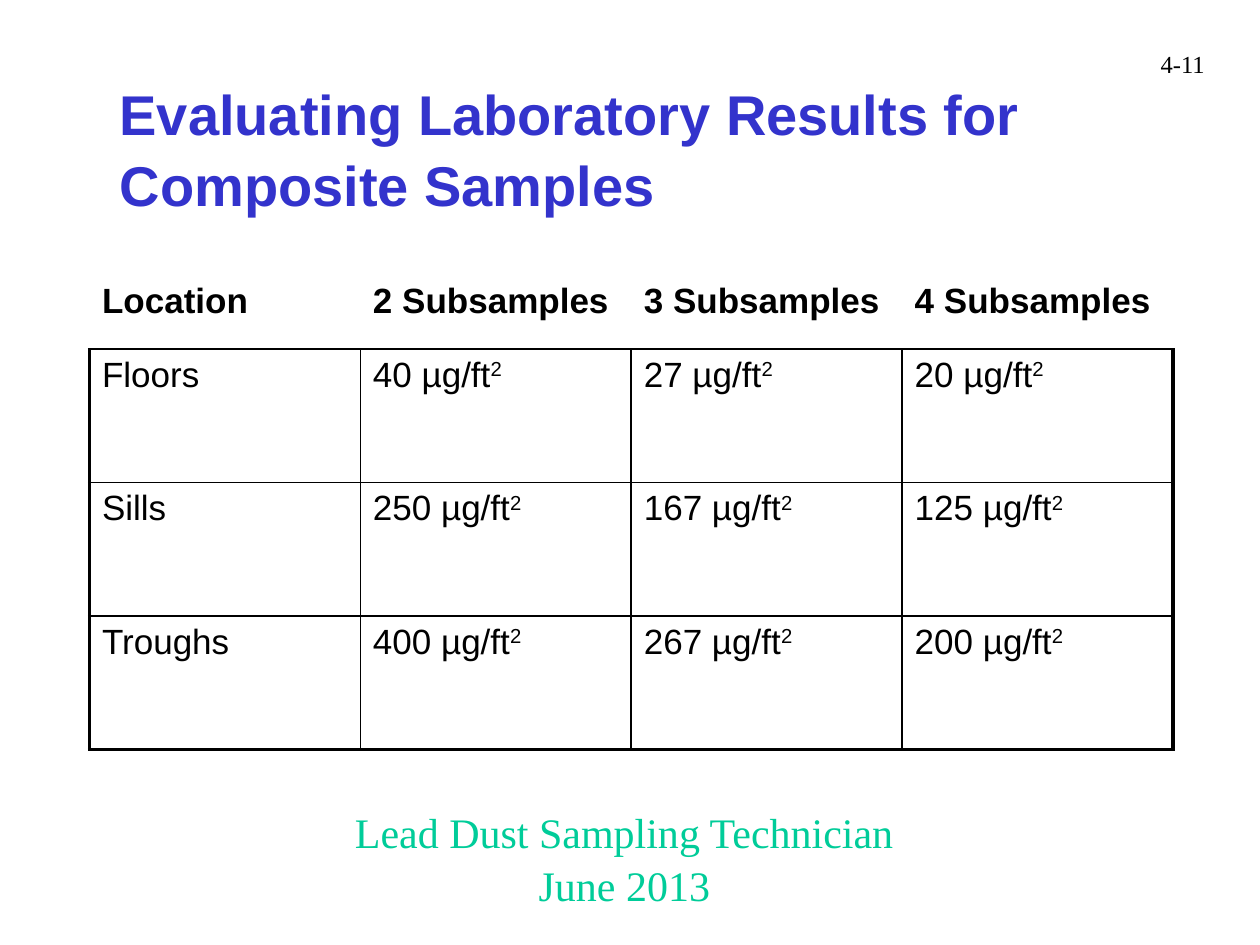
from lxml import etree
from pptx import Presentation
from pptx.dml.color import RGBColor
from pptx.enum.text import MSO_ANCHOR, PP_ALIGN
from pptx.oxml.ns import qn
from pptx.util import Inches, Pt

LEFT, CENTER, RIGHT = PP_ALIGN.LEFT, PP_ALIGN.CENTER, PP_ALIGN.RIGHT
MIDDLE = MSO_ANCHOR.MIDDLE
SANS, SERIF = "Arial", "Times New Roman"
BLACK, BLUE, GREEN = "000000", "3333CC", "00CC99"
NO_STYLE = "{2D5ABB26-0587-4C30-8999-92F81FD0307C}"
THIN, THICK = 1, 2.25

TITLE = "Evaluating Laboratory Results for Composite Samples"
FOOTER = "Lead Dust Sampling Technician\nJune 2013"
PAGE = "4-11"
HEADER = ["Location", "2 Subsamples", "3 Subsamples", "4 Subsamples"]
LIMITS = [
    ("Floors", 40, 27, 20),
    ("Sills", 250, 167, 125),
    ("Troughs", 400, 267, 200),
]
UNIT, POWER = " µg/ft", "2"
COL_W, HEAD_H, ROW_H = 2.15, 0.58, 1.06


def color(hex_string):
    return RGBColor.from_string(hex_string)


def style(r, size, name, hex_string, bold=False):
    f = r.font
    f.size, f.name, f.bold = Pt(size), name, bold
    f.color.rgb = color(hex_string)


def write(tf, text, align, size, name, hex_string, bold=False, spacing=1.05):
    tf.word_wrap = True
    tf.text = text
    for p in tf.paragraphs:
        p.alignment = align
        p.line_spacing = spacing
        for r in p.runs:
            style(r, size, name, hex_string, bold)


def add_text(s, box, *args):
    tb = s.shapes.add_textbox(*map(Inches, box))
    write(tb.text_frame, *args)


def set_border(cell, side, width):
    ln = etree.SubElement(cell._tc.get_or_add_tcPr(), qn(f"a:ln{side}"), w=str(Pt(width)))
    fill = etree.SubElement(ln, qn("a:solidFill"))
    etree.SubElement(fill, qn("a:srgbClr"), val=BLACK)


def add_limits_table(s):
    rows, cols = len(LIMITS) + 1, len(HEADER)
    size = (COL_W * cols, HEAD_H + ROW_H * len(LIMITS))
    table = s.shapes.add_table(rows, cols, *map(Inches, (0.71, 2.19, *size))).table
    table._tbl.tblPr.find(qn("a:tableStyleId")).text = NO_STYLE
    table.horz_banding = False
    for col in table.columns:
        col.width = Inches(COL_W)
    for i, values in enumerate([HEADER, *LIMITS]):
        table.rows[i].height = Inches(ROW_H if i else HEAD_H)
        for j, value in enumerate(values):
            cell = table.cell(i, j)
            p = cell.text_frame.paragraphs[0]
            is_limit = i > 0 and j > 0
            p.text = f"{value}{UNIT}" if is_limit else value
            if is_limit:
                r = p.add_run()
                r.text = POWER
                r.font._element.set("baseline", "30000")
            for r in p.runs:
                style(r, 20, SANS, BLACK, i == 0)
            if i:
                set_border(cell, "L", THIN if j else THICK)
                set_border(cell, "R", THICK if j == cols - 1 else THIN)
                set_border(cell, "T", THIN)
            set_border(cell, "B", THICK if i == rows - 1 else THIN)
            cell.fill.background()


def main():
    prs = Presentation()
    prs.slide_width, prs.slide_height = Inches(10), Inches(7.5)
    s = prs.slides.add_slide(prs.slide_layouts[5])
    s.background.fill.solid()
    s.background.fill.fore_color.rgb = color("FFFFFF")
    add_text(s, (1.58, 6.33, 6.75, 0.91), FOOTER, CENTER, 24, SERIF, GREEN)
    add_text(s, (7.58, 0.33, 2.08, 0.5), PAGE, RIGHT, 14, SERIF, BLACK)
    title = s.shapes.title
    title.left, title.top, title.width, title.height = map(Inches, (0.85, 0.54, 7.96, 1.25))
    write(title.text_frame, TITLE, LEFT, 32, SANS, BLUE, True)
    title.text_frame.vertical_anchor = MIDDLE
    add_limits_table(s)
    prs.save("out.pptx")


if __name__ == "__main__":
    main()
